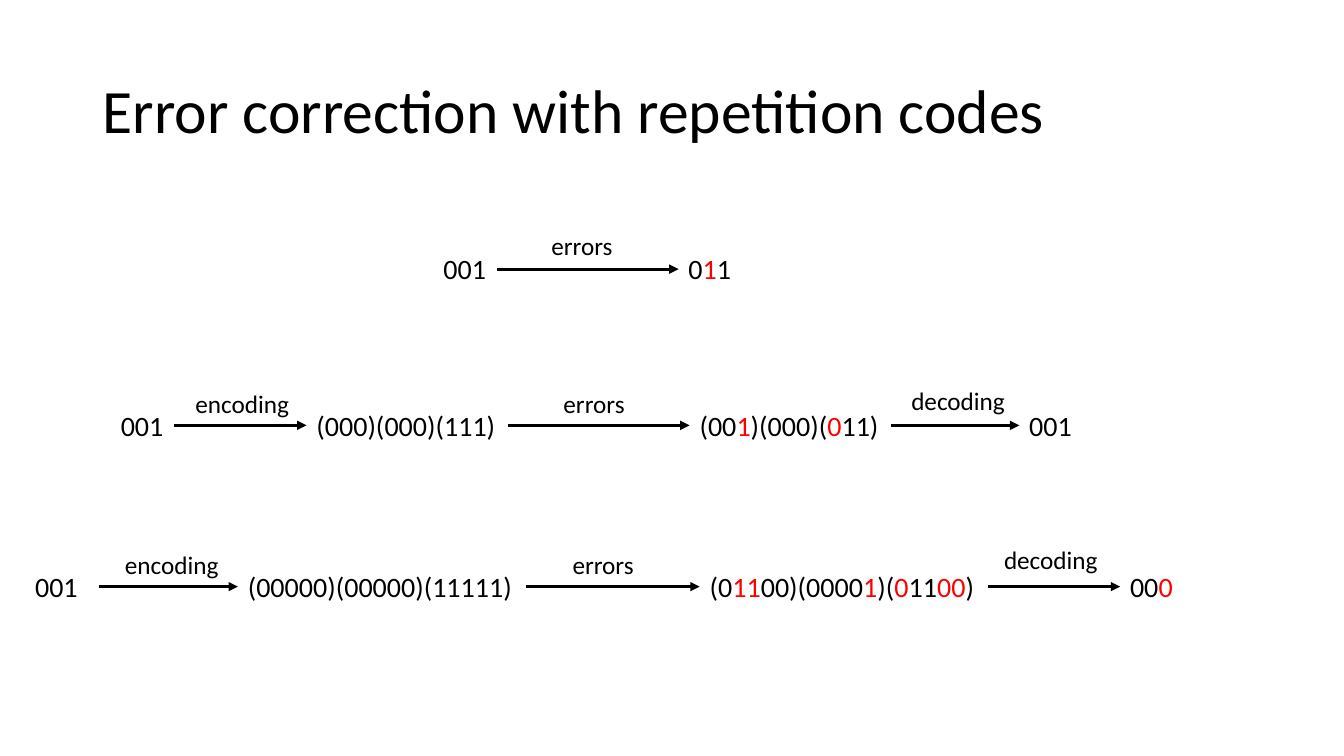
import dataclasses

import lxml.etree
import pptx
import pptx.dml.color
import pptx.enum.shapes
import pptx.enum.text
import pptx.oxml.ns
import pptx.util

Inches = pptx.util.Inches
Pt = pptx.util.Pt


@dataclasses.dataclass(frozen=True)
class Theme:
    font: str = "Calibri"
    ink: str = "000000"
    error: str = "FF0000"
    title_size: int = 44
    code_size: int = 20
    label_size: int = 18
    arrow_width: float = 2.25


@dataclasses.dataclass(frozen=True)
class Transmission:
    """Codes are (left, width, text) and steps (left, top, width, text)."""
    top: float
    codes: tuple
    steps: tuple
    wrap: bool = False


# In a code, "|" switches between correct and flipped bits.
TRANSMISSIONS = (
    Transmission(
        2.45,
        ((4.3, 0.63, "001"), (6.73, 0.63, "0|1|1")),
        ((5.37, 2.24, 0.81, "errors"),),
    ),
    Transmission(
        4,
        ((1.1, 0.63, "001"), (3.04, 2, "(000)(000)(111)"),
         (6.84, 2, "(00|1|)(000)(|0|11)"), (10.11, 0.63, "001")),
        ((1.84, 3.8, 1.14, "encoding"), (5.49, 3.8, 0.81, "errors"),
         (8.94, 3.77, 1.14, "decoding")),
    ),
    Transmission(
        5.6,
        ((0.25, 0.73, "001"), (2.36, 2.86, "(00000)(00000)(11111)"),
         (6.94, 2.86, "(0|11|00)(0000|1|)(|0|11|00|)"), (11.11, 0.63, "00|0")),
        ((1.14, 5.4, 1.37, "encoding"), (5.58, 5.4, 0.81, "errors"),
         (9.86, 5.35, 1.14, "decoding")),
        wrap=True,
    ),
)


class SlideBuilder:
    def __init__(self, slide, theme):
        self.slide = slide
        self.theme = theme

    def style(self, run, size, color):
        run.font.name = self.theme.font
        run.font.size = Pt(size)
        run.font.color.rgb = pptx.dml.color.RGBColor.from_string(color)

    def title(self, text):
        title = self.slide.shapes.title
        title.left, title.top = Inches(0.92), Inches(0.4)
        title.width, title.height = Inches(11.5), Inches(1.45)
        frame = title.text_frame
        frame.text = text
        frame.vertical_anchor = pptx.enum.text.MSO_ANCHOR.MIDDLE
        paragraph = frame.paragraphs[0]
        paragraph.alignment = pptx.enum.text.PP_ALIGN.LEFT
        paragraph.line_spacing = 0.9
        self.style(paragraph.runs[0], self.theme.title_size, self.theme.ink)

    def text(self, left, top, width, height, text, size, wrap=False):
        box = self.slide.shapes.add_textbox(
            Inches(left), Inches(top), Inches(width), Inches(height))
        frame = box.text_frame
        frame.word_wrap = wrap
        frame.auto_size = pptx.enum.text.MSO_AUTO_SIZE.SHAPE_TO_FIT_TEXT
        for index, part in enumerate(text.split("|")):
            run = frame.paragraphs[0].add_run()
            run.text = part
            self.style(run, size, self.theme.error if index % 2 else self.theme.ink)
        return box

    def arrow(self, source, target):
        """Join the right side of source to the left side of target."""
        arrow = self.slide.shapes.add_connector(
            pptx.enum.shapes.MSO_CONNECTOR.STRAIGHT, 0, 0, 0, 0)
        arrow.begin_connect(source, 3)
        arrow.end_connect(target, 1)
        arrow.line.width = Pt(self.theme.arrow_width)
        arrow.line.color.rgb = pptx.dml.color.RGBColor.from_string(self.theme.ink)
        qn = pptx.oxml.ns.qn
        line = arrow.line._get_or_add_ln()
        lxml.etree.SubElement(line, qn("a:tailEnd"), type="triangle")
        lxml.etree.SubElement(line.getparent(), qn("a:effectLst"))

    def transmission(self, row):
        codes = [
            self.text(left, row.top, width, 0.44, code, self.theme.code_size,
                      row.wrap)
            for left, width, code in row.codes
        ]
        for source, target in zip(codes, codes[1:]):
            self.arrow(source, target)
        for left, top, width, step in row.steps:
            self.text(left, top, width, 0.4, step, self.theme.label_size)


def main():
    presentation = pptx.Presentation()
    presentation.slide_width = Inches(13.33)
    presentation.slide_height = Inches(7.5)
    title_only = presentation.slide_layouts[5]
    builder = SlideBuilder(presentation.slides.add_slide(title_only), Theme())
    builder.title("Error correction with repetition codes")
    for row in TRANSMISSIONS:
        builder.transmission(row)
    presentation.save("out.pptx")


if __name__ == "__main__":
    main()
